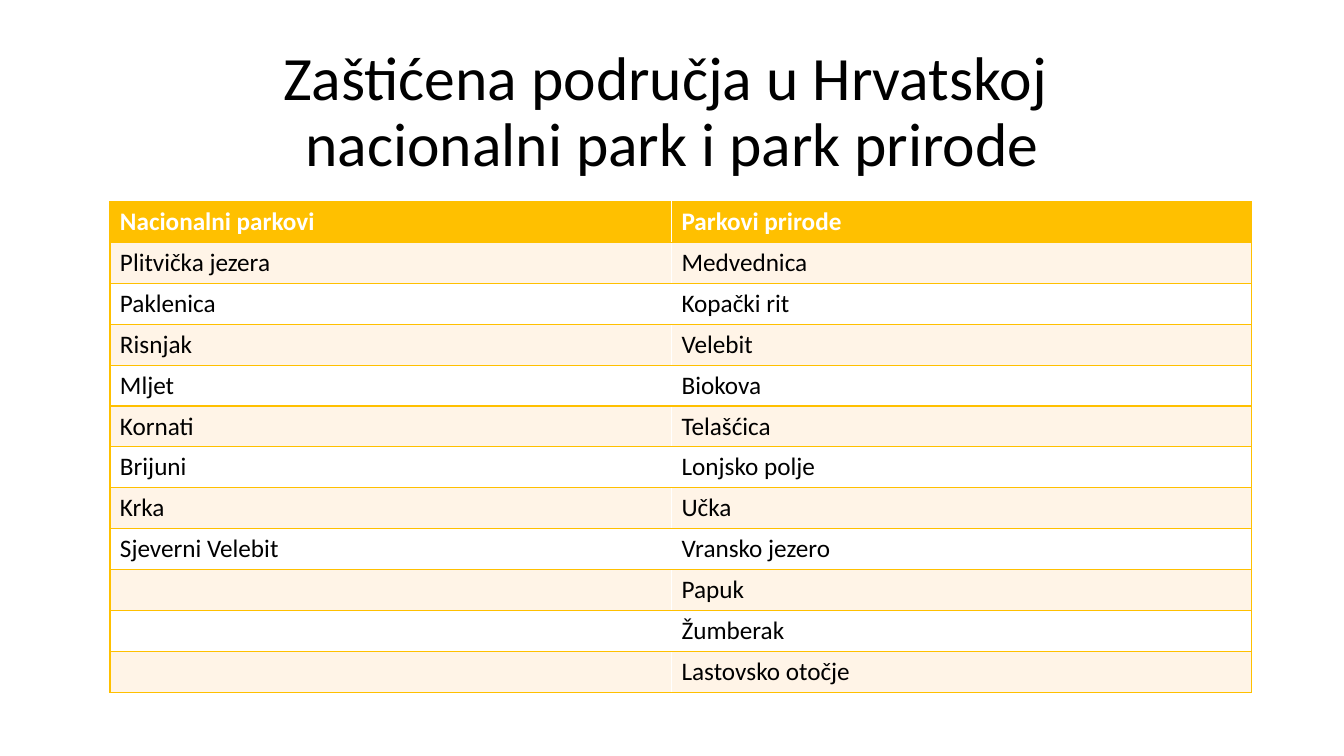
from itertools import zip_longest

from lxml.etree import SubElement
from pptx import Presentation
from pptx.dml.color import RGBColor
from pptx.enum.text import MSO_ANCHOR as Anchor, MSO_AUTO_SIZE as Fit, PP_ALIGN as Align
from pptx.oxml.ns import qn
from pptx.util import Inches, Pt

GOLD, CREAM, WHITE, BLACK = "FFC000", "FFF4E7", "FFFFFF", "000000"
TITLE = "Zaštićena područja u Hrvatskoj \vnacionalni park i park prirode"
PARKS = ["Nacionalni parkovi", "Plitvička jezera", "Paklenica", "Risnjak", "Mljet",
         "Kornati", "Brijuni", "Krka", "Sjeverni Velebit"]
NATURE = ["Parkovi prirode", "Medvednica", "Kopački rit", "Velebit", "Biokova",
          "Telašćica", "Lonjsko polje", "Učka", "Vransko jezero", "Papuk",
          "Žumberak", "Lastovsko otočje"]


def color(code):
    """Turn a hex string into a colour."""
    return RGBColor.from_string(code)


def style(para, size, code, bold=False):
    """Set the font of a paragraph."""
    font = para.font
    font.name, font.size, font.bold = "Calibri", Pt(size), bold
    font.color.rgb = color(code)


def add_title(slide, text, left, top, width, height):
    """Place and format the slide title."""
    title = slide.shapes.title
    title.left, title.top = Inches(left), Inches(top)
    title.width, title.height = Inches(width), Inches(height)
    frame = title.text_frame
    frame.text = text
    frame.auto_size, frame.vertical_anchor = Fit.NONE, Anchor.MIDDLE
    para = frame.paragraphs[0]
    para.alignment, para.line_spacing = Align.CENTER, 0.9
    style(para, 44, BLACK)


def add_edges(cell, sides):
    """Draw thin gold borders on the given sides of a cell."""
    props = cell._tc.get_or_add_tcPr()
    for side in sides:
        line = SubElement(props, qn(f"a:ln{side}"), w=str(Pt(1)))
        fill = SubElement(line, qn("a:solidFill"))
        SubElement(fill, qn("a:srgbClr"), val=GOLD)


def fill_cell(cell, text, row, sides):
    """Write a cell and give it its borders and band colour."""
    head = row == 0
    cell.text = text
    style(cell.text_frame.paragraphs[0], 18, WHITE if head else BLACK, head)
    add_edges(cell, sides)
    cell.fill.solid()
    cell.fill.fore_color.rgb = color(GOLD if head else CREAM if row % 2 else WHITE)


def add_grid(slide, rows, widths, left, top, height):
    """Add the table of protected areas."""
    frame = slide.shapes.add_table(len(rows), len(widths), Inches(left), Inches(top),
                                   Inches(sum(widths)), Inches(height))
    table = frame.table
    for col, width in zip(table.columns, widths):
        col.width = Inches(width)
    for row, texts in enumerate(rows):
        for col, (text, sides) in enumerate(zip(texts, ("LTB", "RTB"))):
            fill_cell(table.cell(row, col), text, row, sides)


def main():
    """Build the slide and save it."""
    deck = Presentation()
    deck.slide_width, deck.slide_height = Inches(13.33), Inches(7.5)
    slide = deck.slides.add_slide(deck.slide_layouts[5])
    add_title(slide, TITLE, 0.92, 0.4, 11.5, 1.45)
    rows = list(zip_longest(PARKS, NATURE, fillvalue=""))
    add_grid(slide, rows, (5.57, 5.75), 1.09, 2, 4.87)
    deck.save("out.pptx")


if __name__ == "__main__":
    main()
